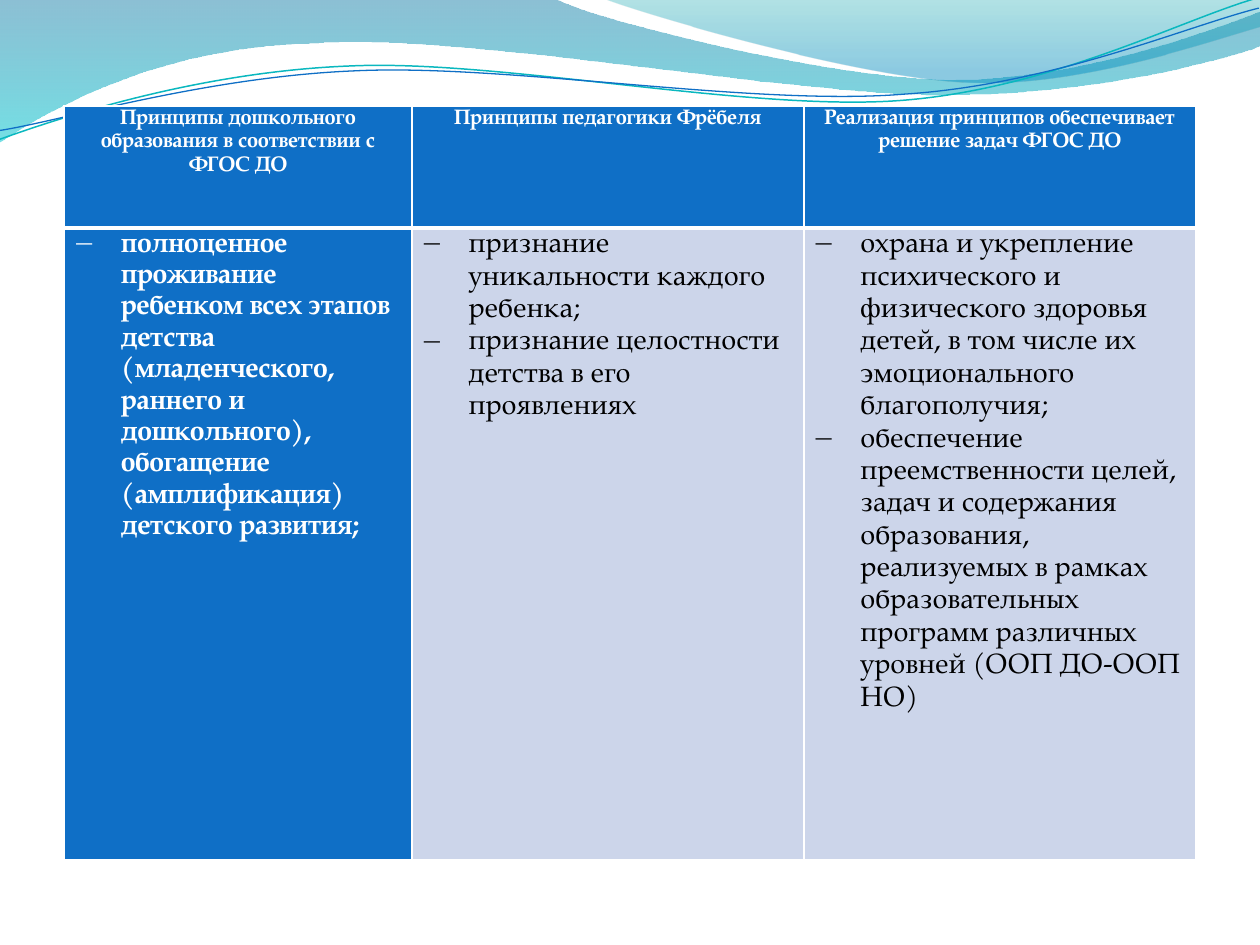
import pptx
import pptx.dml.color
import pptx.enum.text
import pptx.oxml
import pptx.oxml.ns
import pptx.util
from pptx.util import Inches

COLORS = {
    "blue": "0F6FC6", "pale": "CCD5EA", "white": "FFFFFF", "black": "000000",
    "deep": "0074A1", "cyan": "00C6CF", "teal": "00A1A9", "sky": "008BBF",
    "turquoise": "0AB8BF",
}
FONT = "TeX Gyre Pagella"
NS = pptx.oxml.ns.nsdecls("a")
qn = pptx.oxml.ns.qn


def rgb(name):
    return pptx.dml.color.RGBColor.from_string(COLORS[name])


def add_wave(start, segments, closed):
    """Draw an outline from segments of one point (line) or three (Bezier curve)."""
    points = [(Inches(x), Inches(y)) for segment in segments for x, y in segment]
    builder = slide.shapes.build_freeform(Inches(start[0]), Inches(start[1]))
    builder.add_line_segments(points, close=closed)
    wave = builder.convert_to_shape()
    wave.shadow.inherit = False
    lines = iter(list(wave._element.iter(qn("a:lnTo"))))
    for segment in segments:
        steps = [next(lines) for _ in segment]
        if len(steps) == 3:
            curve = pptx.oxml.parse_xml(f"<a:cubicBezTo {NS}/>")
            steps[0].addprevious(curve)
            for step in steps:
                curve.append(step[0])
                step.getparent().remove(step)
    return wave


prs = pptx.Presentation()
prs.slide_width, prs.slide_height = Inches(10), Inches(7.5)
slide = prs.slides.add_slide(prs.slide_layouts[6])

# Translucent waves: start, segments, gradient stops (position, colour, opacity %)
bands = [
    ((0, 0), [
        [(4.4, -0.01)],
        [(4.76, 0.17), (6.64, 0.63), (7.58, 0.63)],
        [(8.53, 0.63), (9.58, 0.26), (10, 0.09)],
        [(10.01, 0.36)],
        [(9.83, 0.44), (8.7, 0.76), (7.46, 0.75)],
        [(6.22, 0.75), (3.82, 0.28), (2.57, 0.34)],
        [(1.29, 0.36), (0.46, 0.83), (-0.01, 1.13)],
    ], [(0, "deep", 45), (1, "cyan", 55)]),
    ((4.79, -0.01), [
        [(5.09, 0.11), (6.82, 0.62), (7.69, 0.65)],
        [(8.56, 0.69), (9.61, 0.32), (10, 0.21)],
        [(10, 0)],
    ], [(0, "teal", 30), (0.8, "sky", 45)]),
]
for start, segments, stops in bands:
    band = add_wave(start, segments, True)
    band.line.fill.background()
    band.fill.gradient()
    band.fill.gradient_angle = 270
    for stop, (position, color, _) in zip(band.fill.gradient_stops, stops):
        stop.position = position
        stop.color.rgb = rgb(color)
    for element, (_, _, opacity) in zip(band._element.spPr.iter(qn("a:srgbClr")), stops):
        element.append(pptx.oxml.parse_xml(f'<a:alpha {NS} val="{opacity * 1000}"/>'))

# Thin strands, tilted together
strands = [
    ((-0.02, 0.87), [
        [(0.47, 0.72), (1.58, 0.41), (2.78, 0.42)],
        [(3.96, 0.42), (5.91, 0.93), (7.12, 0.9)],
        [(8.32, 0.87), (9.4, 0.36), (10, 0.22)],
    ], "turquoise", 0.85),
    ((-0.02, 0.8), [
        [(0.46, 0.75), (1.64, 0.45), (2.83, 0.46)],
        [(4.03, 0.46), (5.96, 0.89), (7.16, 0.85)],
        [(8.35, 0.83), (9.42, 0.42), (10.01, 0.3)],
    ], "blue", 0.75),
]
for start, segments, color, width in strands:
    strand = add_wave(start, segments, False)
    strand.rotation = 357.3
    strand.fill.background()
    strand.line.color.rgb = rgb(color)
    strand.line.width = pptx.util.Pt(width)

# Table of principles
headings = [
    "Принципы дошкольного образования в соответствии с ФГОС ДО",
    "Принципы педагогики Фрёбеля",
    "Реализация принципов обеспечивает решение задач ФГОС ДО",
]
principles = [
    ["полноценное проживание ребенком всех этапов детства (младенческого, раннего и "
     "дошкольного), обогащение (амплификация) детского развития;"],
    ["признание уникальности каждого ребенка;",
     "признание целостности детства в его проявлениях"],
    ["охрана и укрепление психического и физического здоровья детей, в том числе их "
     "эмоционального благополучия;",
     "обеспечение преемственности целей, задач и содержания образования, реализуемых в "
     "рамках образовательных программ различных уровней (ООП ДО-ООП НО)"],
]
rows = [[[heading] for heading in headings], principles]
table = slide.shapes.add_table(2, 3, Inches(0.51), Inches(0.84),
                               Inches(8.98), Inches(5.98)).table
table.first_col = True
for column, width in zip(table.columns, (2.76, 3.11, 3.11)):
    column.width = Inches(width)
for row, height in zip(table.rows, (0.97, 5.01)):
    row.height = Inches(height)

for r, row in enumerate(rows):
    for c, items in enumerate(row):
        cell = table.cell(r, c)
        is_heading = r == 0
        emphasized = is_heading or c == 0
        cell.margin_left = cell.margin_right = Inches(0.07)
        cell.margin_top = cell.margin_bottom = 0
        cell.fill.solid()
        cell.fill.fore_color.rgb = rgb("blue" if emphasized else "pale")
        for i, side in enumerate(("lnL", "lnR", "lnT", "lnB")):
            at_divider = side == ("lnB" if is_heading else "lnT")
            width = pptx.util.Pt(3 if at_divider else 1)
            cell._tc.tcPr.insert(i, pptx.oxml.parse_xml(
                f'<a:{side} {NS} w="{width}"><a:solidFill><a:srgbClr val="{COLORS["white"]}"/>'
                f'</a:solidFill></a:{side}>'))

        cell.text_frame.text = "\n".join(items)
        for paragraph in cell.text_frame.paragraphs:
            paragraph.line_spacing = 1.15
            if is_heading:
                paragraph.alignment = pptx.enum.text.PP_ALIGN.CENTER
            else:
                properties = paragraph._p.get_or_add_pPr()
                properties.set("marL", str(Inches(0.38)))
                properties.set("indent", str(-Inches(0.38)))
                properties.append(pptx.oxml.parse_xml(f'<a:buChar {NS} char="−"/>'))
            font = paragraph.runs[0].font
            font.name = FONT
            font.size = pptx.util.Pt(12 if is_heading else 16)
            font.bold = emphasized
            font.color.rgb = rgb("white" if emphasized else "black")

prs.save("out.pptx")
